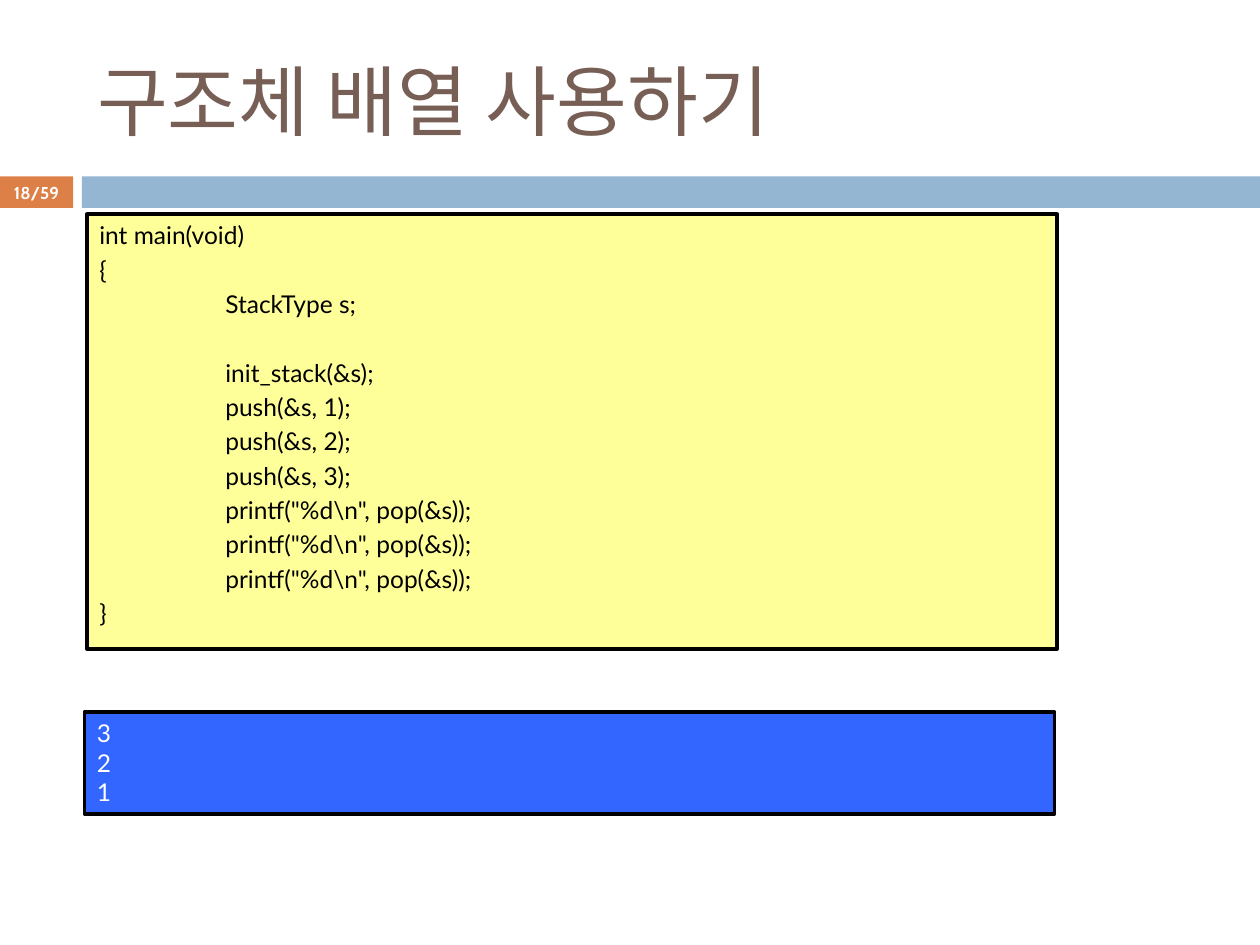
from lxml.etree import SubElement
from pptx import Presentation
from pptx.dml.color import RGBColor
from pptx.enum.shapes import MSO_SHAPE as Shape
from pptx.enum.text import MSO_ANCHOR as Anchor, PP_ALIGN as Align
from pptx.oxml.ns import qn
from pptx.util import Inches, Pt

WIDTH, HEIGHT = 10, 7.5
BAND_TOP, BAND_HEIGHT = 1.4, 0.25
BADGE_WIDTH = 0.58
LEFT, BOX_WIDTH = 0.67, 7.7
COLORS = {
    "title": "775F55", "badge": "DD8047", "band": "94B6D2",
    "code": "FFFF99", "output": "3366FF", "black": "000000", "white": "FFFFFF",
}
CODE = r"""int main(void)
{
	StackType s;

	init_stack(&s);
	push(&s, 1);
	push(&s, 2);
	push(&s, 3);
	printf("%d\n", pop(&s));
	printf("%d\n", pop(&s));
	printf("%d\n", pop(&s));
}""".split("\n")


def color(name):
    """Return the named colour."""
    return RGBColor.from_string(COLORS[name])


def add_run(paragraph, text, font, size, color_name, bold=False):
    """Add one formatted run to a paragraph."""
    run = paragraph.add_run()
    run.text = text
    run.font.name = font
    run.font.size = Pt(size)
    run.font.bold = bold
    run.font.color.rgb = color(color_name)


def add_block(slide, box, fill, outlined=False):
    """Add a flat rectangle, with a black outline if wanted."""
    shape = slide.shapes.add_shape(Shape.RECTANGLE, *map(Inches, box))
    shape.shadow.inherit = False
    shape.fill.solid()
    shape.fill.fore_color.rgb = color(fill)
    if outlined:
        shape.line.color.rgb = color("black")
        shape.line.width = Pt(2)
    else:
        shape.line.fill.background()
    return shape


def add_listing(slide, box, fill, lines, text_color, gap=0):
    """Add an outlined rectangle with left-aligned lines and one-inch tabs."""
    frame = add_block(slide, box, fill, outlined=True).text_frame
    frame.word_wrap = True
    frame.vertical_anchor = Anchor.TOP
    for index, line in enumerate(lines):
        paragraph = frame.add_paragraph() if index else frame.paragraphs[0]
        if line.startswith("\t"):
            tabs = SubElement(paragraph._p.get_or_add_pPr(), qn("a:tabLst"))
            SubElement(tabs, qn("a:tab"), pos=str(Inches(1)), algn="l")
        paragraph.alignment = Align.LEFT
        paragraph.space_before = Pt(gap if index else 0)
        add_run(paragraph, line, "Lato", 14, text_color)


def set_title(slide, text):
    """Place and fill the title placeholder."""
    title = slide.shapes.title
    title.left, title.top = Inches(LEFT), Inches(0.25)
    title.width, title.height = Inches(8.92), Inches(1.08)
    title.text_frame.vertical_anchor = Anchor.MIDDLE
    paragraph = title.text_frame.paragraphs[0]
    paragraph.alignment = Align.LEFT
    add_run(paragraph, text, "Cabin", 44, "title")


def add_page_number(slide, text):
    """Add the page number over the badge."""
    box = (0, BAND_TOP - 0.01, BADGE_WIDTH, BAND_HEIGHT + 0.02)
    frame = slide.shapes.add_textbox(*map(Inches, box)).text_frame
    frame.margin_left = frame.margin_right = 0
    frame.word_wrap = True
    frame.vertical_anchor = Anchor.MIDDLE
    paragraph = frame.paragraphs[0]
    paragraph.alignment = Align.CENTER
    add_run(paragraph, text, "Cabin", 9.8, "white", bold=True)


def main():
    """Build and save the slide."""
    presentation = Presentation()
    presentation.slide_width = Inches(WIDTH)
    presentation.slide_height = Inches(HEIGHT)
    slide = presentation.slides.add_slide(presentation.slide_layouts[5])
    band_left = 0.65
    add_block(slide, (0, BAND_TOP, BADGE_WIDTH, BAND_HEIGHT), "badge")
    add_block(slide, (band_left, BAND_TOP, WIDTH - band_left, BAND_HEIGHT), "band")
    set_title(slide, "구조체 배열 사용하기")
    add_listing(slide, (LEFT + 0.02, 1.7, BOX_WIDTH, 3.45), "code", CODE, "black", gap=2.8)
    add_listing(slide, (LEFT, 5.65, BOX_WIDTH, 0.81), "output", "321", "white")
    add_page_number(slide, "18/59")
    presentation.save("out.pptx")


if __name__ == "__main__":
    main()
